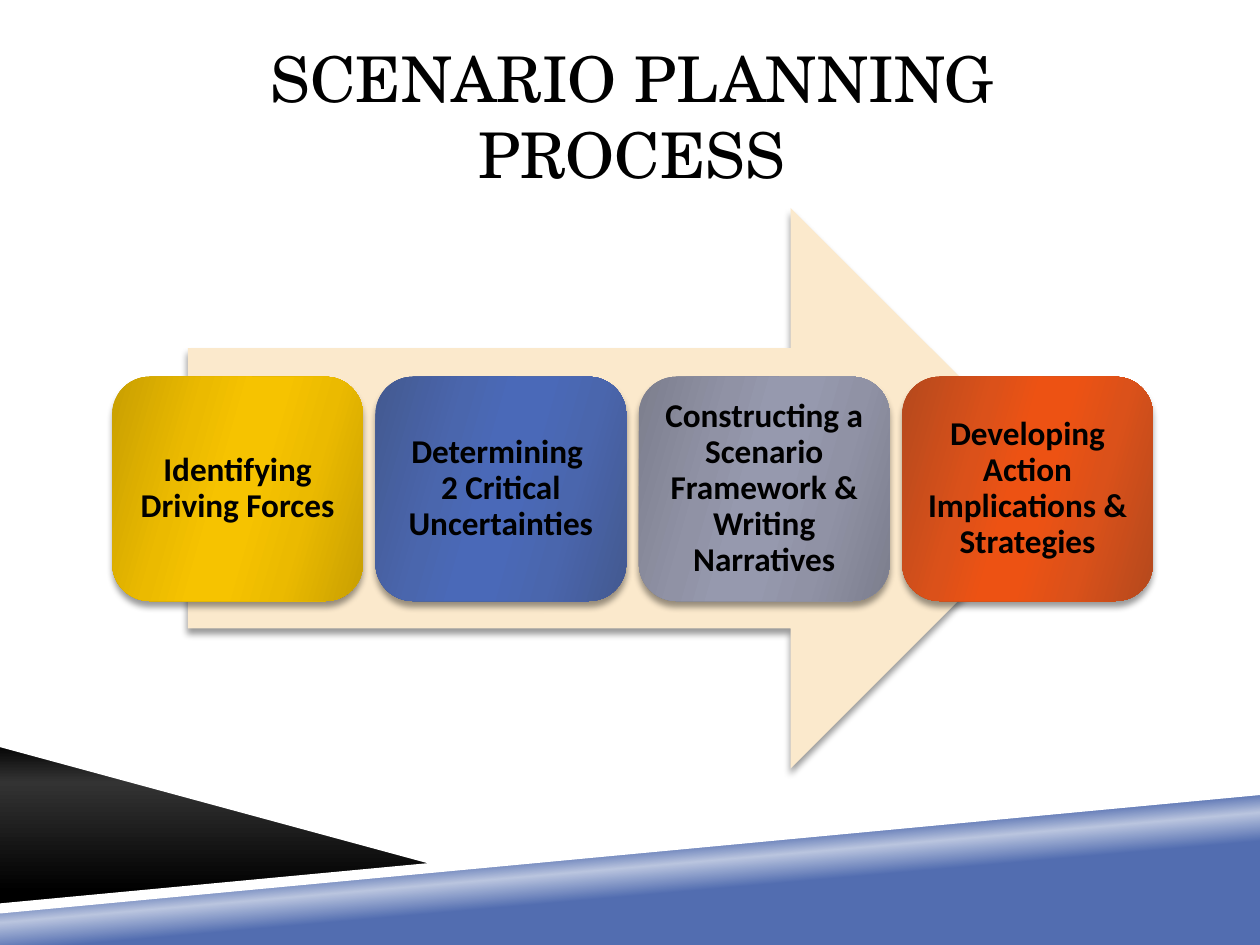
from dataclasses import dataclass

from lxml import etree
from pptx import Presentation
from pptx.dml.color import RGBColor
from pptx.enum.shapes import MSO_SHAPE
from pptx.enum.text import MSO_ANCHOR, PP_ALIGN
from pptx.oxml.ns import qn
from pptx.util import Inches, Pt


@dataclass(frozen=True)
class Theme:
    text: str = "000000"
    white: str = "FFFFFF"
    arrow: str = "FBE9CC"
    band: tuple = ((39, "526DB0"), (50, "BAC5DF"), (58, "526DB0"))
    wedge: tuple = ((0, "000000"), (24, "333333"), (90, "000000"))
    gold: tuple = ("C89F01", "EBBA00", "F6C300")
    blue: tuple = ("435990", "4A66AD", "4A69B8")
    gray: tuple = ("7C7E8D", "9092A5", "9699AE")
    orange: tuple = ("B4491D", "DB511A", "ED5213")
    title_font: str = "TeX Gyre Schola"
    step_font: str = "Calibri"
    title_size: int = 36
    step_size: int = 19


class Page:
    def __init__(self, deck, theme):
        self.theme = theme
        self.shapes = deck.slides.add_slide(deck.slide_layouts[6]).shapes

    def paint(self, shape, fill, angle=0):
        shape.shadow.inherit = False
        shape.line.fill.background()
        if isinstance(fill, str):
            shape.fill.solid()
            shape.fill.fore_color.rgb = RGBColor.from_string(fill)
            return
        shape.fill.gradient()
        shape.fill.gradient_angle = 360 - angle
        stops = shape._element.spPr.find(".//" + qn("a:gsLst"))
        for stop in list(stops):
            stops.remove(stop)
        for position, color in fill:
            stop = etree.SubElement(stops, qn("a:gs"), pos=str(position * 1000))
            etree.SubElement(stop, qn("a:srgbClr"), val=color)

    def cast_shadow(self, shape):
        effects = shape._element.spPr.find(qn("a:effectLst"))
        shadow = etree.SubElement(
            effects, qn("a:outerShdw"), blurRad=str(Pt(4)), dist=str(Pt(3.3)),
            dir="5400000", rotWithShape="0")
        color = etree.SubElement(shadow, qn("a:srgbClr"), val=self.theme.text)
        etree.SubElement(color, qn("a:alpha"), val="40000")

    def polygon(self, points, fill, angle=0):
        start, *others = [(Inches(x), Inches(y)) for x, y in points]
        builder = self.shapes.build_freeform(*start)
        builder.add_line_segments(others, close=True)
        self.paint(builder.convert_to_shape(), fill, angle)

    def preset(self, kind, place, fill, angle=0):
        shape = self.shapes.add_shape(kind, *map(Inches, place))
        self.paint(shape, fill, angle)
        self.cast_shadow(shape)
        return shape

    def set_text(self, shape, text, font, size, margins, bold=False):
        frame = shape.text_frame
        frame.word_wrap = True
        frame.vertical_anchor = MSO_ANCHOR.MIDDLE
        frame.margin_left = frame.margin_right = Inches(margins[0])
        frame.margin_top = frame.margin_bottom = Inches(margins[1])
        para = frame.paragraphs[0]
        para.text = text
        para.alignment = PP_ALIGN.CENTER
        para.font.name = font
        para.font.size = Pt(size)
        para.font.bold = bold
        para.font.color.rgb = RGBColor.from_string(self.theme.text)
        return para

    def title(self, text, place):
        box = self.shapes.add_textbox(*map(Inches, place))
        self.set_text(box, text, self.theme.title_font, self.theme.title_size, (0, 0.05))

    def step(self, text, place, shades):
        edge, middle, center = shades
        stops = zip((0, 30, 45, 55, 73, 100),
                    (edge, middle, center, center, middle, edge))
        box = self.preset(MSO_SHAPE.ROUNDED_RECTANGLE, place, tuple(stops), 16)
        para = self.set_text(box, text, self.theme.step_font, self.theme.step_size,
                             (0.08, 0.08), bold=True)
        para.line_spacing = 0.9


def main():
    theme = Theme()
    deck = Presentation()
    deck.slide_width, deck.slide_height = Inches(10), Inches(7.5)
    page = Page(deck, theme)

    page.polygon([(0, 7.21), (10, 6.27), (10, 7.5), (0, 7.5)], theme.band, 265)
    page.polygon([(0, 5.89), (3.59, 6.85), (0, 7.21)], theme.wedge, 90)
    page.polygon([(10, 6.23), (0, 7.17), (0, 7.25), (10, 6.31)], theme.white)
    page.polygon([(0, 5.85), (0, 5.93), (3.5, 6.88), (3.75, 6.86)], theme.white)

    page.title("SCENARIO PLANNING PROCESS", (0.89, 0.04, 8.25, 1.75))
    page.preset(MSO_SHAPE.RIGHT_ARROW, (1.49, 1.65, 7.01, 4.45), theme.arrow)

    steps = [
        ("Identifying Driving Forces", theme.gold),
        ("Determining \v2 Critical Uncertainties", theme.blue),
        ("Constructing a Scenario Framework & Writing Narratives", theme.gray),
        ("Developing Action Implications & Strategies", theme.orange),
    ]
    left, width, gap = 0.89, 1.99, 0.1
    for index, (text, shades) in enumerate(steps):
        page.step(text, (left + index * (width + gap), 2.99, width, 1.78), shades)

    deck.save("out.pptx")


if __name__ == "__main__":
    main()
